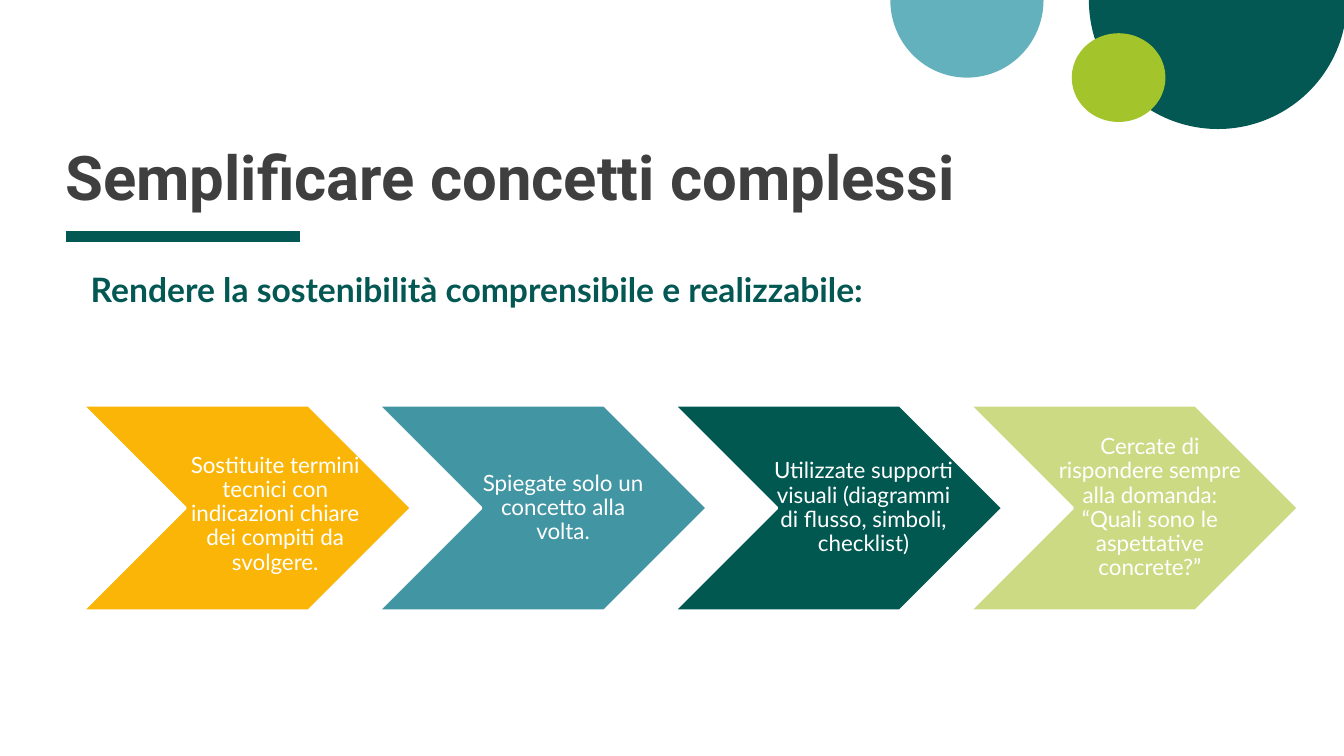
from lxml import etree
from pptx import Presentation
from pptx.dml.color import RGBColor
from pptx.enum import shapes, text
from pptx.oxml.ns import qn
from pptx.util import Inches, Pt

TITLE = "Semplificare concetti complessi"
SUBTITLE = "Rendere la sostenibilità comprensibile e realizzabile:"
COLOURS = {
    "green": "035854",
    "sky": "64B1BE",
    "lime": "A3C42A",
    "grey": "3F3F3F",
    "white": "FFFFFF",
    "amber": "FAB506",
    "teal": "4295A2",
    "forest": "005851",
    "pale": "CBDA83",
}
HALF_TURN = 108
CIRCLES = [
    ("PIE", (10.8, -1.28, 2.56, 2.56), "green"),
    ("PIE", (8.83, -0.77, 1.52, 1.54), "sky"),
    ("OVAL", (10.63, 0.33, 0.93, 0.88), "lime"),
]
STEPS = [
    ("Sostituite termini tecnici con indicazioni chiare dei compiti da svolgere.",
     "amber", (1.76, 4.15, 1.89, 1.91)),
    ("Spiegate solo un concetto alla volta.",
     "teal", (4.64, 4.02, 1.84, 2.04)),
    ("Utilizzate supporti visuali (diagrammi di flusso, simboli, checklist)",
     "forest", (7.57, 4.02, 1.94, 2.04)),
    ("Cercate di rispondere sempre alla domanda: “Quali sono le aspettative concrete?”",
     "pale", (10.37, 4.02, 2.02, 2.04)),
]
STEP_LEFT, STEP_TOP, STEP_WIDTH, STEP_HEIGHT = 0.82, 4.02, 3.26, 2.04
STEP_PITCH = 2.933


def colour(name):
    return RGBColor.from_string(COLOURS[name])


def add_filled(page, preset, place, fill):
    shape = page.shapes.add_shape(preset, *map(Inches, place))
    shape.shadow.inherit = False
    shape.fill.solid()
    shape.fill.fore_color.rgb = colour(fill)
    shape.line.fill.background()
    return shape


def add_text(page, words, place, insets, anchor, align, spacing, font, size, ink, bold=False):
    box = page.shapes.add_textbox(*map(Inches, place))
    frame = box.text_frame
    frame.word_wrap = True
    frame.vertical_anchor = anchor
    frame.margin_left, frame.margin_top, frame.margin_right, frame.margin_bottom = map(Inches, insets)
    para = frame.paragraphs[0]
    para.text = words
    para.alignment = align
    para.line_spacing = spacing
    para.font.name = font
    para.font.size = Pt(size)
    para.font.bold = bold
    para.font.color.rgb = colour(ink)


def add_rule(page):
    rule = page.shapes.add_connector(
        shapes.MSO_CONNECTOR.STRAIGHT, Inches(0.65), Inches(2.35), Inches(2.98), Inches(2.35))
    rule.line.color.rgb = colour("green")
    rule.line.width = Pt(8)
    etree.SubElement(rule._element.spPr, qn("a:effectLst"))


def main():
    deck = Presentation()
    deck.slide_width, deck.slide_height = Inches(13.33), Inches(7.5)
    page = deck.slides.add_slide(deck.slide_layouts[6])

    for preset, place, fill in CIRCLES:
        circle = add_filled(page, shapes.MSO_SHAPE[preset], place, fill)
        if preset == "PIE":
            circle.adjustments[0] = 0
            circle.adjustments[1] = HALF_TURN
    add_rule(page)

    anchors, aligns = text.MSO_ANCHOR, text.PP_ALIGN
    add_text(page, TITLE, (0.65, 0.37, 9.29, 1.74), (0, 0, 0, 0),
             anchors.BOTTOM, aligns.LEFT, 0.8, "Roboto", 44, "grey", True)
    add_text(page, SUBTITLE, (0.65, 2.5, 11.2, 1.13), (0.25, 0.25, 0, 0),
             anchors.TOP, aligns.LEFT, 0.8, "Lato", 24, "green", True)

    for index, (words, fill, text_place) in enumerate(STEPS):
        place = (STEP_LEFT + index * STEP_PITCH, STEP_TOP, STEP_WIDTH, STEP_HEIGHT)
        chevron = add_filled(page, shapes.MSO_SHAPE.CHEVRON, place, fill)
        chevron.line.color.rgb = colour("white")
        chevron.line.width = Pt(2)
        add_text(page, words, text_place, (0.08, 0.03, 0.03, 0.03),
                 anchors.MIDDLE, aligns.CENTER, 0.9, "Lato", 16, "white")

    deck.save("out.pptx")


if __name__ == "__main__":
    main()
